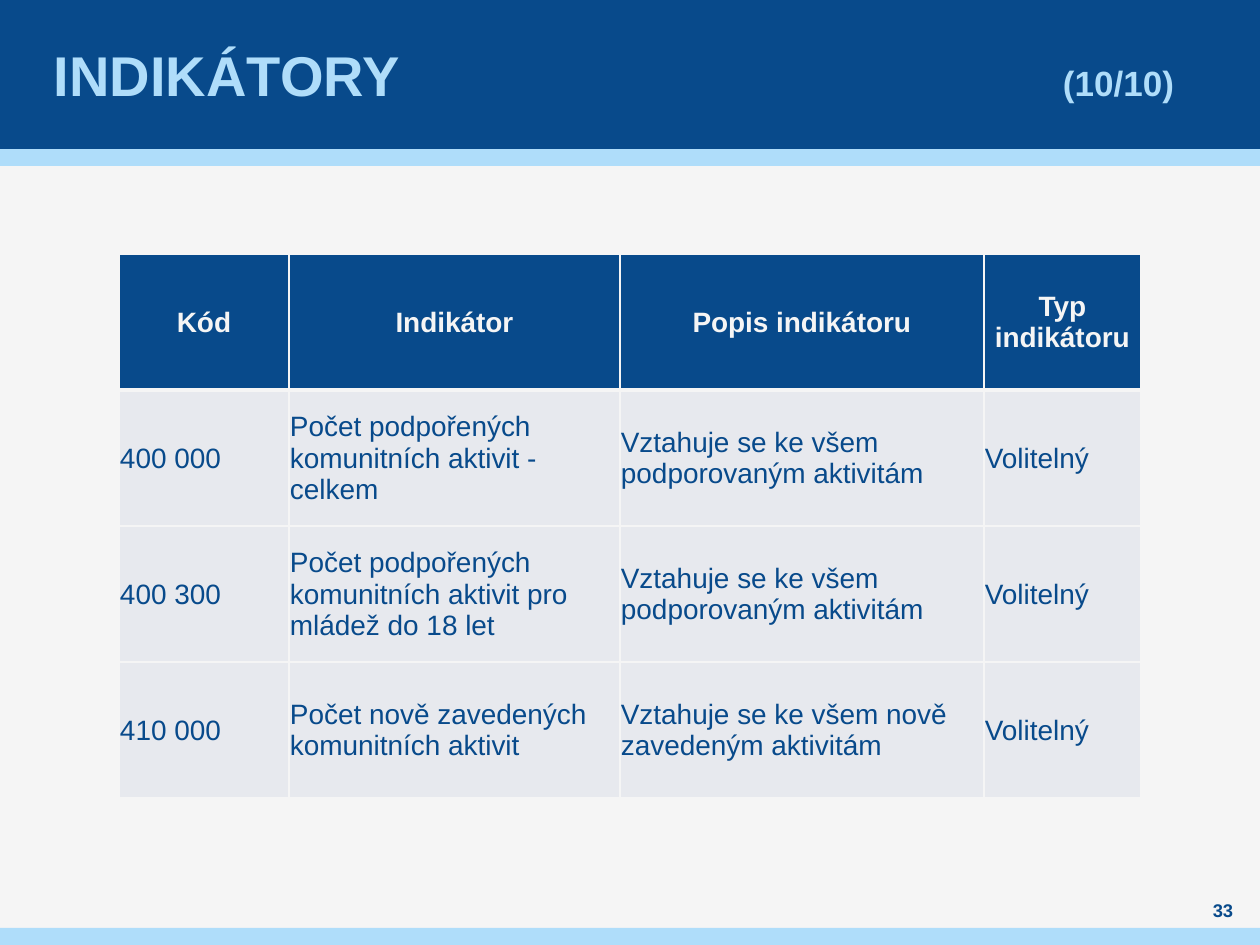
import lxml.etree
import pptx
import pptx.dml.color
import pptx.enum.shapes
import pptx.enum.text
import pptx.oxml.ns
import pptx.util

SCALE = 914400 / 126
COLORS = {"navy": "084A8B", "sky": "AFDDFA", "paper": "F5F5F5", "cell": "E7E9EE"}
ALIGN = pptx.enum.text.PP_ALIGN
MIDDLE = pptx.enum.text.MSO_ANCHOR.MIDDLE
qn = pptx.oxml.ns.qn


def px(value):
    return pptx.util.Emu(round(value * SCALE))


def style(r, size, color, bold):
    r.font.name = "Arial"
    r.font.size = pptx.util.Pt(size)
    r.font.bold = bold
    r.font.color.rgb = pptx.dml.color.RGBColor.from_string(COLORS[color])


prs = pptx.Presentation()
prs.slide_width, prs.slide_height = px(1260), px(945)
s = prs.slides.add_slide(prs.slide_layouts[6])
s.background.fill.solid()
s.background.fill.fore_color.rgb = pptx.dml.color.RGBColor.from_string(COLORS["paper"])

for top, height, color in [(149, 17, "sky"), (0, 149, "navy"), (928, 17, "sky")]:
    band = s.shapes.add_shape(
        pptx.enum.shapes.MSO_SHAPE.RECTANGLE, 0, px(top), px(1260), px(height))
    band.shadow.inherit = False
    band.line.fill.background()
    band.fill.solid()
    band.fill.fore_color.rgb = pptx.dml.color.RGBColor.from_string(COLORS[color])

texts = [
    ((49, 0, 1160, 149), 5, ALIGN.LEFT, [("INDIKÁTORY\t", 32, "sky"), ("(10/10)", 20, "sky")]),
    ((1191, 898, 64, 25), 0, ALIGN.CENTER, [("33", 10.5, "navy")]),
]
for box, inset, align, runs in texts:
    sp = s.shapes.add_textbox(*map(px, box))
    tf = sp.text_frame
    tf.word_wrap = True
    tf.vertical_anchor = MIDDLE
    tf.margin_left = tf.margin_right = px(inset)
    tf.margin_top = tf.margin_bottom = 0
    p = tf.paragraphs[0]
    p.alignment = align
    for text, size, color in runs:
        r = p.add_run()
        r.text = text
        style(r, size, color, True)
    if len(runs) > 1:
        tabs = lxml.etree.SubElement(p._p.get_or_add_pPr(), qn("a:tabLst"))
        lxml.etree.SubElement(tabs, qn("a:tab"), pos=str(px(1009)), algn="l")

rows = [
    ("Kód", "Indikátor", "Popis indikátoru", "Typ indikátoru"),
    ("400 000", "Počet podpořených komunitních aktivit - celkem",
     "Vztahuje se ke všem podporovaným aktivitám", "Volitelný"),
    ("400 300", "Počet podpořených komunitních aktivit pro mládež do 18 let",
     "Vztahuje se ke všem podporovaným aktivitám", "Volitelný"),
    ("410 000", "Počet nově zavedených komunitních aktivit",
     "Vztahuje se ke všem nově zavedeným aktivitám", "Volitelný"),
]
widths = [170, 331, 364, 157]
row_height = 136
table = s.shapes.add_table(
    len(rows), len(widths), px(119), px(254), px(sum(widths)), px(row_height * len(rows))).table
for column, width in zip(table.columns, widths):
    column.width = px(width)

for i, row in enumerate(rows):
    table.rows[i].height = px(row_height)
    header = i == 0
    for j, text in enumerate(row):
        cell = table.cell(i, j)
        cell.vertical_anchor = MIDDLE
        cell.margin_left = cell.margin_right = cell.margin_top = px(1)
        cell.margin_bottom = 0
        cell.text_frame.text = text
        p = cell.text_frame.paragraphs[0]
        body_align = ALIGN.JUSTIFY if j in (0, 3) else ALIGN.LEFT
        p.alignment = ALIGN.CENTER if header else body_align
        style(p.runs[0], 16, "paper" if header else "navy", header)
        for side in "LRTB":
            heavy = (i, side) in [(0, "B"), (1, "T")]
            ln = lxml.etree.SubElement(
                cell._tc.get_or_add_tcPr(), qn("a:ln" + side),
                w=str(pptx.util.Pt(3 if heavy else 1)))
            fill = lxml.etree.SubElement(ln, qn("a:solidFill"))
            lxml.etree.SubElement(fill, qn("a:srgbClr"), val=COLORS["paper"])
        cell.fill.solid()
        cell.fill.fore_color.rgb = pptx.dml.color.RGBColor.from_string(
            COLORS["navy" if header else "cell"])

prs.save("out.pptx")
